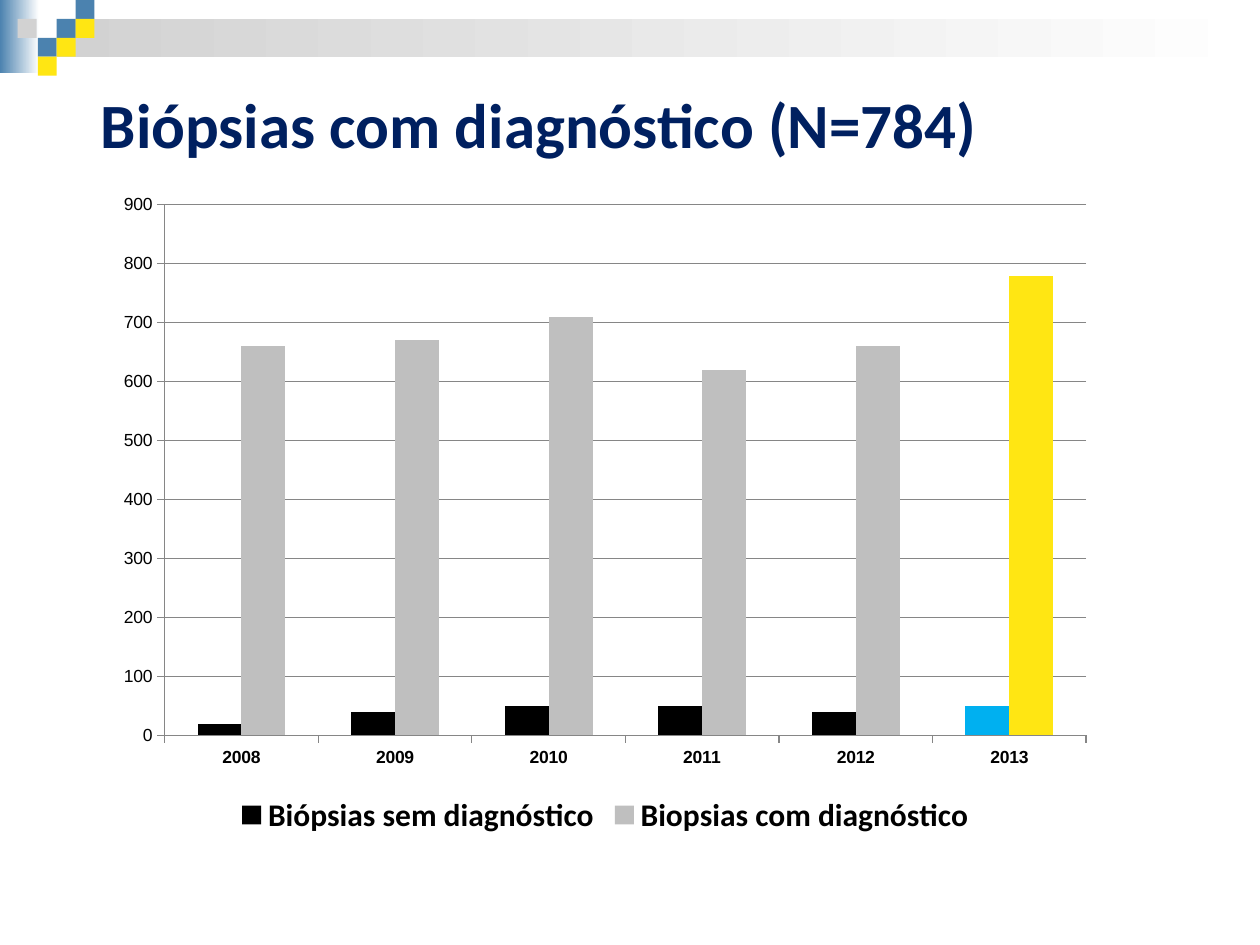
from dataclasses import dataclass

import pptx
import pptx.chart.data
import pptx.dml.color
import pptx.enum.chart
import pptx.enum.shapes
import pptx.enum.text
import pptx.oxml
import pptx.oxml.ns
import pptx.util
from pptx.util import Inches


def rgb(value: str) -> pptx.dml.color.RGBColor:
    return pptx.dml.color.RGBColor.from_string(value)


@dataclass(frozen=True)
class Theme:
    blue: str = "4B82AF"
    yellow: str = "FFE613"
    gray: str = "D2D2D2"
    white: str = "FFFFFF"
    black: str = "000000"
    navy: str = "002060"
    cyan: str = "00B0F0"
    bar_gray: str = "BFBFBF"
    axis: str = "868686"
    heading_font: str = "Calibri"
    axis_font: str = "Arial"
    title_size: int = 36
    legend_size: int = 18
    axis_size: int = 10


@dataclass(frozen=True)
class Block:
    left: float
    top: float
    color: str
    width: float = 0.15
    height: float = 0.15
    fade_to: str = ""


@dataclass(frozen=True)
class BarSeries:
    name: str
    values: tuple[int, ...]
    color: str
    last_color: str


THEME = Theme()
BLOCKS = (
    Block(0, 0, THEME.blue, 0.31, 0.58, THEME.white),
    Block(0.45, 0.15, THEME.gray, 9.55, 0.3, THEME.white),
    Block(0.45, 0.15, THEME.blue),
    Block(0.6, 0, THEME.blue),
    Block(0.6, 0.15, THEME.yellow),
    Block(0.3, 0.3, THEME.blue),
    Block(0.14, 0.15, THEME.gray),
    Block(0.45, 0.3, THEME.yellow),
    Block(0.3, 0.45, THEME.yellow),
)
YEARS = [str(year) for year in range(2008, 2014)]
SERIES = (
    BarSeries("Biópsias sem diagnóstico", (20, 40, 50, 50, 40, 50),
              THEME.black, THEME.cyan),
    BarSeries("Biopsias com diagnóstico", (660, 670, 710, 620, 660, 780),
              THEME.bar_gray, THEME.yellow),
)


def set_font(font, name: str, size: int, color: str, bold: bool) -> None:
    font.name = name
    font.size = pptx.util.Pt(size)
    font.color.rgb = rgb(color)
    font.bold = bold


def fill_solid(fill, color: str) -> None:
    fill.solid()
    fill.fore_color.rgb = rgb(color)


def add_block(slide, block: Block) -> None:
    sp = slide.shapes.add_shape(
        pptx.enum.shapes.MSO_SHAPE.RECTANGLE, Inches(block.left),
        Inches(block.top), Inches(block.width), Inches(block.height))
    sp.shadow.inherit = False
    sp.line.fill.background()
    if block.fade_to:
        sp.fill.gradient()
        sp.fill.gradient_angle = 0
        for stop, color in zip(sp.fill.gradient_stops, (block.color, block.fade_to)):
            stop.color.rgb = rgb(color)
    else:
        fill_solid(sp.fill, block.color)


def set_title(slide, text: str) -> None:
    sp = slide.shapes.title
    sp.left, sp.top = Inches(0.7), Inches(0.55)
    sp.width, sp.height = Inches(7.8), Inches(0.85)
    tf = sp.text_frame
    tf.word_wrap = True
    tf.vertical_anchor = pptx.enum.text.MSO_ANCHOR.MIDDLE
    p = tf.paragraphs[0]
    p.alignment = pptx.enum.text.PP_ALIGN.LEFT
    r = p.add_run()
    r.text = text
    set_font(r.font, THEME.heading_font, THEME.title_size, THEME.navy, True)


def place_plot(chart, x: float, y: float, w: float, h: float) -> None:
    """Fix the inner plot area, in fractions of the chart's size."""
    area = chart.plots[0]._element.getparent()
    for old in area.findall(pptx.oxml.ns.qn("c:layout")):
        area.remove(old)
    area.insert(0, pptx.oxml.parse_xml(
        f'<c:layout {pptx.oxml.ns.nsdecls("c")}><c:manualLayout>'
        '<c:layoutTarget val="inner"/><c:xMode val="edge"/><c:yMode val="edge"/>'
        f'<c:x val="{x}"/><c:y val="{y}"/><c:w val="{w}"/><c:h val="{h}"/>'
        '</c:manualLayout></c:layout>'))


def style_axis(axis, bold: bool) -> None:
    axis.major_tick_mark = pptx.enum.chart.XL_TICK_MARK.OUTSIDE
    axis.format.line.color.rgb = rgb(THEME.axis)
    set_font(axis.tick_labels.font, THEME.axis_font, THEME.axis_size,
             THEME.black, bold)


def add_biopsy_chart(slide) -> None:
    data = pptx.chart.data.CategoryChartData()
    data.categories = YEARS
    for item in SERIES:
        data.add_series(item.name, item.values)
    chart = slide.shapes.add_chart(
        pptx.enum.chart.XL_CHART_TYPE.COLUMN_CLUSTERED, Inches(0.83),
        Inches(1.47), Inches(7.95), Inches(5.2), data).chart
    chart.has_title = False
    set_font(chart.font, THEME.axis_font, THEME.axis_size, THEME.black, False)
    place_plot(chart, 0.06, 0.03, 0.92, 0.81)

    plot = chart.plots[0]
    plot.vary_by_categories = False
    plot.gap_width, plot.overlap = 150, 0
    for series, item in zip(plot.series, SERIES):
        series.invert_if_negative = False
        fill_solid(series.format.fill, item.color)
        fill_solid(series.points[len(YEARS) - 1].format.fill, item.last_color)

    style_axis(chart.category_axis, True)
    values = chart.value_axis
    style_axis(values, False)
    values.minimum_scale, values.maximum_scale, values.major_unit = 0, 900, 100
    values.major_gridlines.format.line.color.rgb = rgb(THEME.axis)

    chart.has_legend = True
    chart.legend.position = pptx.enum.chart.XL_LEGEND_POSITION.BOTTOM
    chart.legend.include_in_layout = False
    set_font(chart.legend.font, THEME.heading_font, THEME.legend_size,
             THEME.black, True)


def main() -> None:
    prs = pptx.Presentation()
    prs.slide_width, prs.slide_height = Inches(10), Inches(7.5)
    slide = prs.slides.add_slide(prs.slide_layouts.get_by_name("Title Only"))
    fill_solid(slide.background.fill, THEME.white)
    for block in BLOCKS:
        add_block(slide, block)
    add_biopsy_chart(slide)
    set_title(slide, "Biópsias com diagnóstico (N=784)")
    prs.save("out.pptx")


if __name__ == "__main__":
    main()
